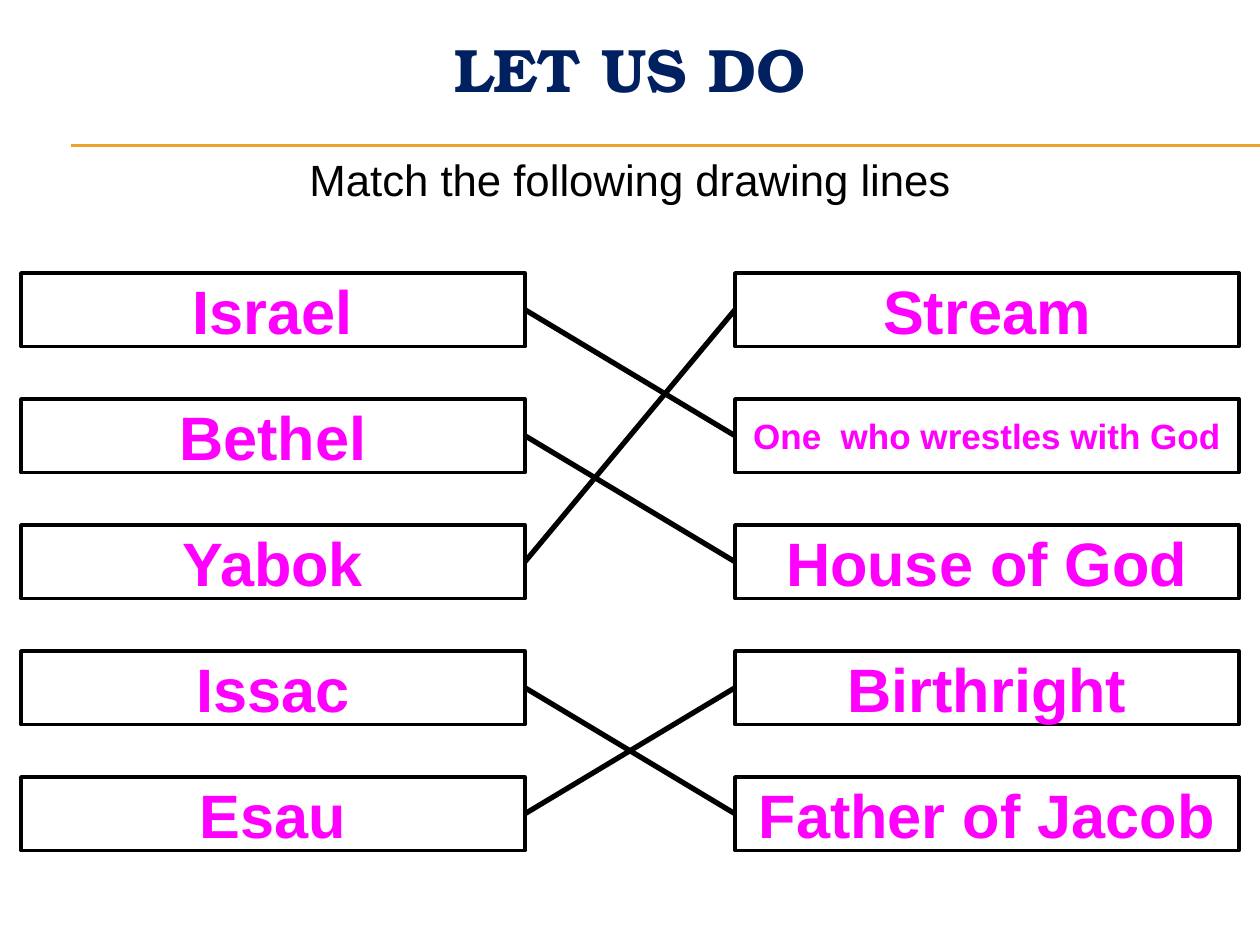
from pptx import Presentation
from pptx.dml.color import RGBColor
from pptx.enum import shapes, text
from pptx.oxml.ns import qn
from pptx.util import Pt


def color(code):
    return RGBColor.from_string(code)


class Board:
    font = "Arial"
    ink = "000000"
    pink = "FF00FF"
    navy = "002060"
    gold = "F0A22E"
    white = "FFFFFF"

    def __init__(self, deck):
        self.slide = deck.slides.add_slide(deck.slide_layouts[5])

    def put(self, frame, words, size, hue, bold=False, font=None):
        frame.word_wrap = True
        para = frame.paragraphs[0]
        para.alignment = text.PP_ALIGN.CENTER
        run = para.add_run()
        run.text = words
        run.font.name = font or self.font
        run.font.size = Pt(size)
        run.font.bold = bold
        run.font.color.rgb = color(hue)

    def title(self, words, x, y, w, h):
        shape = self.slide.shapes.title
        shape.left, shape.top, shape.width, shape.height = map(Pt, (x, y, w, h))
        shape.text_frame.vertical_anchor = text.MSO_ANCHOR.MIDDLE
        self.put(shape.text_frame, words, 35, self.navy, True, "TeX Gyre Bonum")

    def label(self, words, x, y, w, h):
        shape = self.slide.shapes.add_textbox(*map(Pt, (x, y, w, h)))
        self.put(shape.text_frame, words, 25, self.ink)

    def box(self, words, x, y, w, h, size=35):
        shape = self.slide.shapes.add_shape(
            shapes.MSO_SHAPE.RECTANGLE, *map(Pt, (x, y, w, h)))
        shape.shadow.inherit = False
        shape.fill.solid()
        shape.fill.fore_color.rgb = color(self.white)
        shape.line.color.rgb = color(self.ink)
        shape.line.width = Pt(2)
        shape.text_frame.vertical_anchor = text.MSO_ANCHOR.MIDDLE
        self.put(shape.text_frame, words, size, self.pink, True)
        return shape

    def line(self, x1, y1, x2, y2, hue, width):
        link = self.slide.shapes.add_connector(
            shapes.MSO_CONNECTOR.STRAIGHT, *map(Pt, (x1, y1, x2, y2)))
        link.line.color.rgb = color(hue)
        link.line.width = Pt(width)
        props = link._element.spPr
        props.append(props.makeelement(qn("a:effectLst"), {}))
        return link

    def join(self, start, end):
        link = self.line(0, 0, 0, 0, self.ink, 3)
        link.begin_connect(start, 3)
        link.end_connect(end, 1)


def main():
    deck = Presentation()
    deck.slide_width, deck.slide_height = Pt(720), Pt(540)
    board = Board(deck)

    for y in (82.8, 83.5):
        board.line(40.5, y, 720, y, board.gold, 0.75)
    board.title("LET US DO", 0, 6, 720, 66)
    board.label("Match the following drawing lines", 18, 84, 684, 42)

    names = ["Israel", "Bethel", "Yabok", "Issac", "Esau"]
    facts = [("Stream", 35), ("One  who wrestles with God", 20),
             ("House of God", 35), ("Birthright", 35), ("Father of Jacob", 35)]
    top, step, wide, high = 156, 72, 288, 42
    left = [board.box(name, 12, top + step * row, wide, high)
            for row, name in enumerate(names)]
    right = [board.box(fact, 420, top + step * row, wide, high, size)
             for row, (fact, size) in enumerate(facts)]

    for start, end in [(1, 2), (2, 0), (0, 1), (3, 4), (4, 3)]:
        board.join(left[start], right[end])

    deck.save("out.pptx")


if __name__ == "__main__":
    main()
